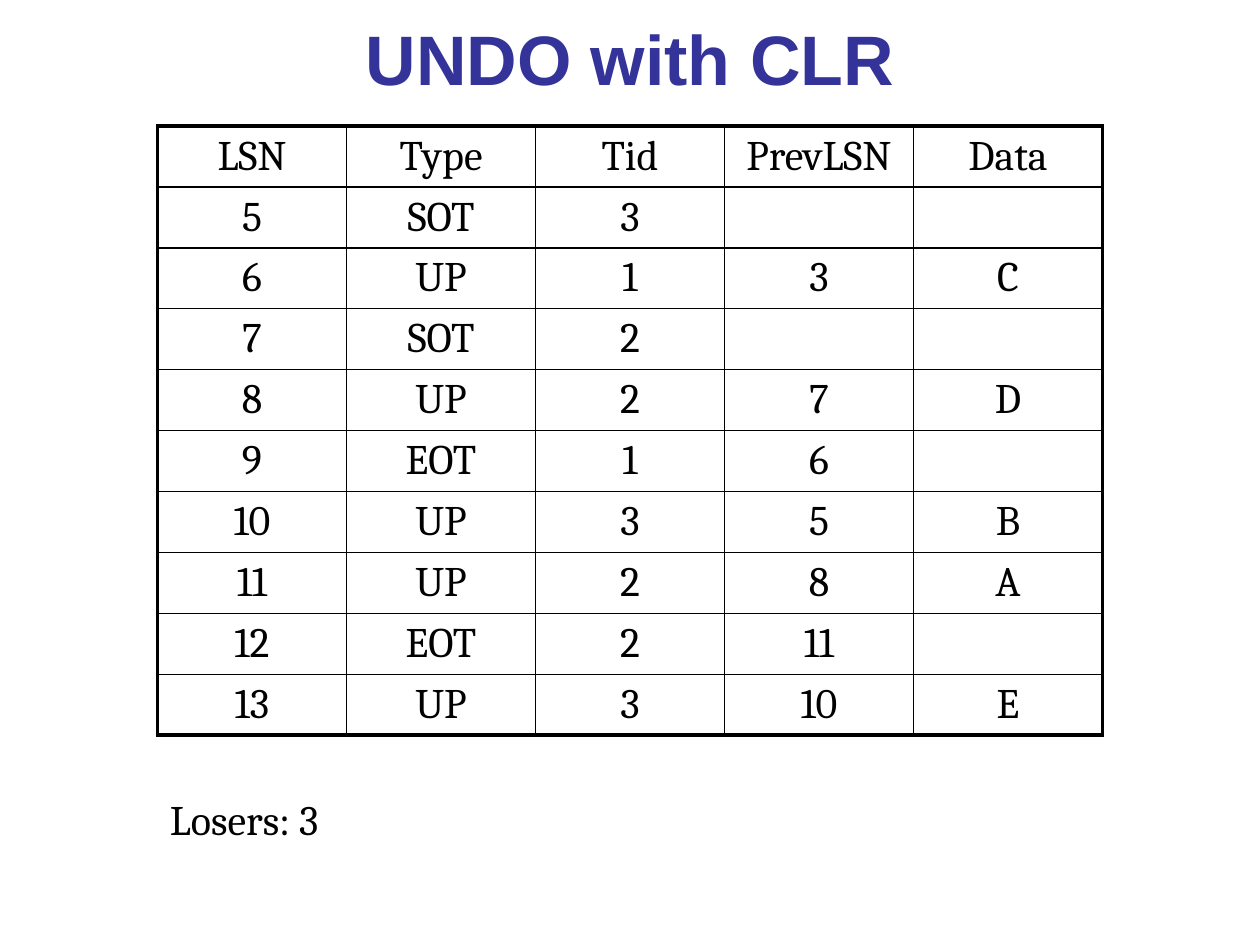
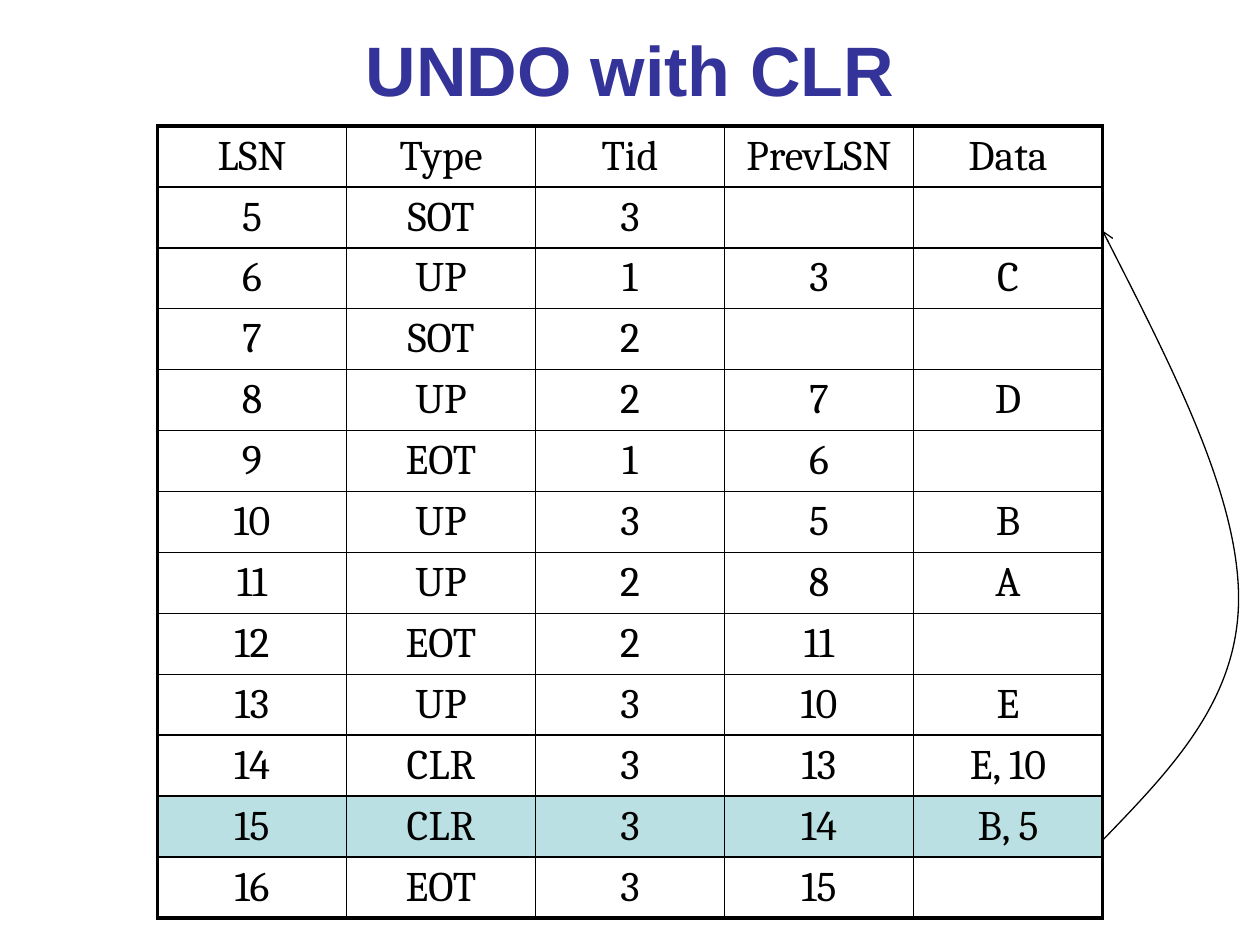
from pptx import Presentation
from pptx.dml.color import RGBColor
from pptx.enum.text import MSO_ANCHOR, PP_ALIGN
from pptx.oxml.ns import qn
from pptx.util import Inches, Pt
from lxml import etree

BLACK, WHITE = "000000", "FFFFFF"
TITLE_BLUE, HIGHLIGHT = "333399", "BBE0E3"
TITLE_FONT, BODY_FONT = "Arial", "Cambria"
THIN, THICK = 1, 2.25

TABLE_LEFT, TABLE_TOP = 1.25, 1
COLUMN_WIDTH = 1.5
ROW_HEIGHT = 6.29 / 13  # thirteen rows fit above the slide's bottom edge
CELL_BOTTOM_MARGIN = 0.02

HEADER = ("LSN", "Type", "Tid", "PrevLSN", "Data")
LOG = [
    ("5", "SOT", "3", "", ""),
    ("6", "UP", "1", "3", "C"),
    ("7", "SOT", "2", "", ""),
    ("8", "UP", "2", "7", "D"),
    ("9", "EOT", "1", "6", ""),
    ("10", "UP", "3", "5", "B"),
    ("11", "UP", "2", "8", "A"),
    ("12", "EOT", "2", "11", ""),
    ("13", "UP", "3", "10", "E"),
]
UNDO_LOG = [
    ("14", "CLR", "3", "13", "E, 10"),
    ("15", "CLR", "3", "14", "B, 5"),
    ("16", "EOT", "3", "15", ""),
]


def color(hex_value):
    return RGBColor.from_string(hex_value)


def write(text_frame, text, size=24, font=BODY_FONT, fill=BLACK,
          bold=False, align=PP_ALIGN.LEFT):
    paragraph = text_frame.paragraphs[0]
    paragraph.alignment = align
    if not text:
        return
    run = paragraph.add_run()
    run.text = text
    run.font.size = Pt(size)
    run.font.name = font
    run.font.bold = bold
    run.font.color.rgb = color(fill)


def set_border(cell, side, width):
    properties = cell._tc.get_or_add_tcPr()
    line = etree.SubElement(properties, qn(f"a:ln{side}"), w=str(Pt(width)))
    solid = etree.SubElement(line, qn("a:solidFill"))
    etree.SubElement(solid, qn("a:srgbClr"), val=BLACK)


class Deck:
    def __init__(self):
        self.presentation = Presentation()
        self.presentation.slide_width = Inches(10)
        self.presentation.slide_height = Inches(7.5)
        self.slide = None

    def add_slide(self, title, title_top):
        layout = self.presentation.slide_layouts[6]
        self.slide = self.presentation.slides.add_slide(layout)
        self.text(title, 0.75, title_top, 8.5, 1.08, anchor=MSO_ANCHOR.MIDDLE,
                  size=40, font=TITLE_FONT, fill=TITLE_BLUE, bold=True,
                  align=PP_ALIGN.CENTER)

    def text(self, text, left, top, width, height, anchor=MSO_ANCHOR.TOP, **style):
        box = self.slide.shapes.add_textbox(
            Inches(left), Inches(top), Inches(width), Inches(height))
        box.text_frame.word_wrap = True
        box.text_frame.vertical_anchor = anchor
        write(box.text_frame, text, **style)

    def log_table(self, records, highlighted=None):
        rows = [HEADER, *records]
        last_row, last_column = len(rows) - 1, len(HEADER) - 1
        table = self.slide.shapes.add_table(
            len(rows), len(HEADER), Inches(TABLE_LEFT), Inches(TABLE_TOP),
            Inches(COLUMN_WIDTH * len(HEADER)), Inches(ROW_HEIGHT * len(rows))).table
        table.first_row = table.horz_banding = False
        for row, values in enumerate(rows):
            table.rows[row].height = Inches(ROW_HEIGHT)
            for column, value in enumerate(values):
                cell = table.cell(row, column)
                cell.margin_bottom = Inches(CELL_BOTTOM_MARGIN)
                write(cell.text_frame, value, align=PP_ALIGN.CENTER)
                # Thick frame outside, thin rules inside
                outer_sides = {"L": column == 0, "R": column == last_column,
                               "T": row == 0, "B": row == last_row}
                for side, is_outer in outer_sides.items():
                    set_border(cell, side, THICK if is_outer else THIN)
                cell.fill.solid()
                cell.fill.fore_color.rgb = color(
                    HIGHLIGHT if values[0] == highlighted else WHITE)

    def curved_arrow(self, start, *points):
        """Draw Bezier curves; every three points make one curve."""
        builder = self.slide.shapes.build_freeform(*map(Inches, start))
        builder.add_line_segments(
            [(Inches(x), Inches(y)) for x, y in points], close=False)
        shape = builder.convert_to_shape()
        shape.shadow.inherit = False
        shape.fill.background()
        shape.line.color.rgb = color(BLACK)
        shape.line.width = Pt(0.75)
        # Join each three line segments into one cubic curve
        segments = list(shape._element.iter(qn("a:lnTo")))
        for index in range(0, len(segments), 3):
            curve = etree.Element(qn("a:cubicBezTo"))
            segments[index].addprevious(curve)
            for segment in segments[index:index + 3]:
                curve.append(segment[0])
                segment.getparent().remove(segment)
        line = shape._element.spPr.find(qn("a:ln"))
        etree.SubElement(line, qn("a:tailEnd"), type="arrow")


def main():
    deck = Deck()

    # Log before the undo phase
    deck.add_slide("UNDO with CLR", title_top=-0.08)
    deck.log_table(LOG)
    deck.text("Losers: 3", 1.25, 6.25, 3.92, 0.5)

    # Log with compensation records; record 15 points back to record 5
    deck.add_slide("UNDO with CLR", title_top=0)
    deck.log_table(LOG + UNDO_LOG, highlighted="15")
    deck.curved_arrow((8.75, 6.67),
                      (9.29, 6.11), (9.83, 5.56), (9.83, 4.75),
                      (9.83, 3.94), (9.29, 2.89), (8.75, 1.83))

    deck.presentation.save("out.pptx")


if __name__ == "__main__":
    main()
